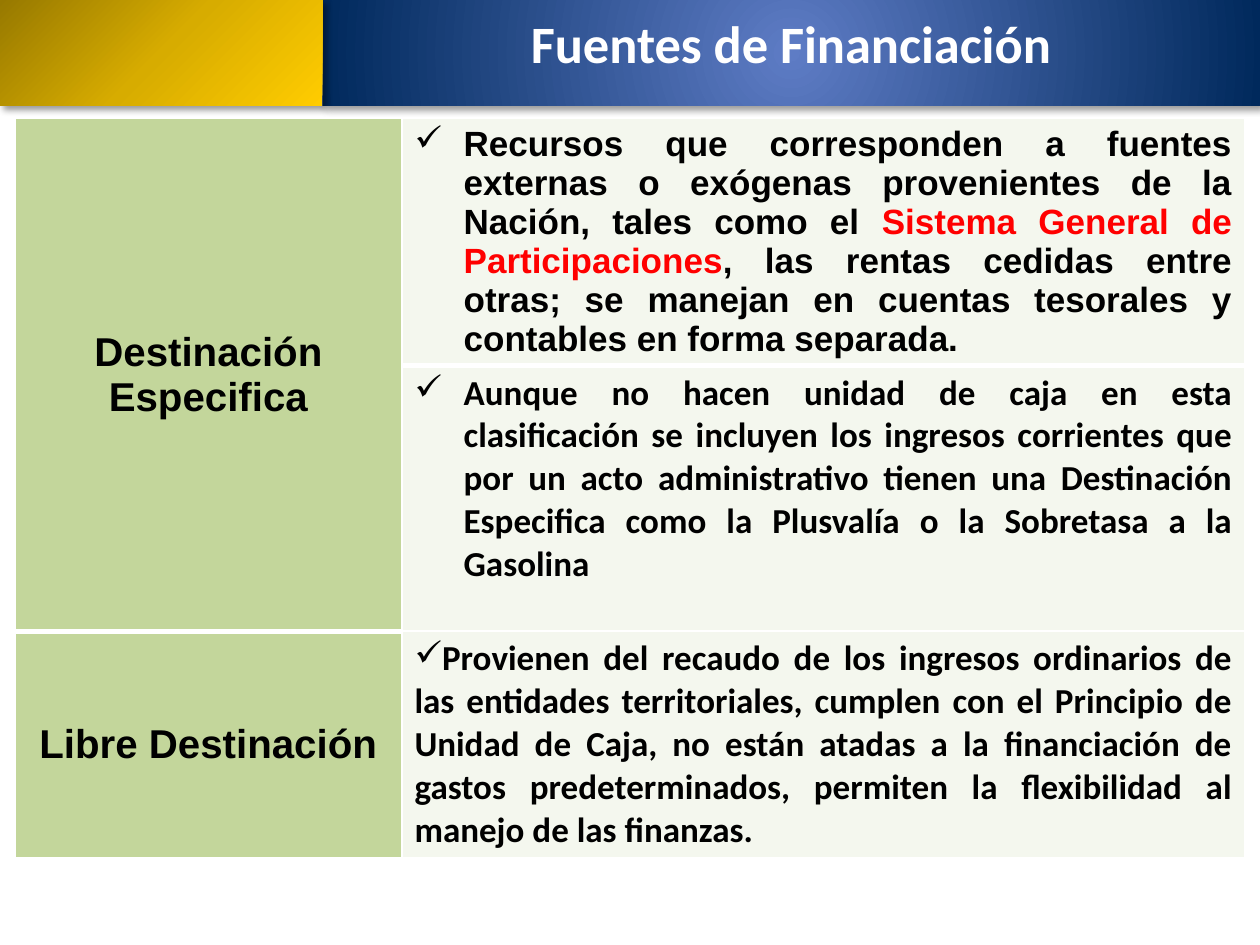
from dataclasses import dataclass

from lxml import etree
from pptx import Presentation
from pptx.dml.color import RGBColor
from pptx.enum import shapes, text
from pptx.oxml import ns
from pptx.util import Inches, Pt


@dataclass(frozen=True)
class Theme:
    heading_font: str = "Calibri"
    label_font: str = "Arial"
    heading_size: float = 30
    label_size: float = 23
    body_size: float = 20
    white: str = "FFFFFF"
    black: str = "000000"
    accent: str = "FF0000"
    label_fill: str = "C3D69B"
    detail_fill: str = "EBF1DE"
    blue: tuple = ((0, "5E7CC5"), (100, "00295C"))
    gold: tuple = ((0, "977900"), (50, "D7AC00"), (100, "FFCC00"))


def add_xml(parent, tag, **attributes):
    return etree.SubElement(parent, ns.qn(tag), {k: str(v) for k, v in attributes.items()})


class SlideBuilder:
    def __init__(self, slide, theme):
        self.slide = slide
        self.theme = theme

    def style(self, font, size, color, name):
        font.size, font.bold, font.name = Pt(size), True, name
        font.color.rgb = RGBColor.from_string(color)

    def band(self, left, width, height, stops, focus):
        """Header block with a radial gradient and a soft shadow."""
        block = self.slide.shapes.add_shape(
            shapes.MSO_SHAPE.RECTANGLE, Inches(left), 0, Inches(width), Inches(height))
        block.line.fill.background()
        block.fill.gradient()
        properties = block.fill._xPr
        gradient = properties.find(ns.qn("a:gradFill"))
        for child in list(gradient):
            gradient.remove(child)
        stop_list = add_xml(gradient, "a:gsLst")
        for position, color in stops:
            stop = add_xml(stop_list, "a:gs", pos=position * 1000)
            add_xml(stop, "a:srgbClr", val=color)
        radial = add_xml(gradient, "a:path", path="circle")
        add_xml(radial, "a:fillToRect", **{side: value * 1000 for side, value in zip("ltrb", focus)})
        block.shadow.inherit = False
        shadow = add_xml(properties.find(ns.qn("a:effectLst")), "a:outerShdw",
                         blurRad=Pt(4), dist=Pt(3), dir=45 * 60000, algn="tl", rotWithShape=0)
        add_xml(add_xml(shadow, "a:srgbClr", val=self.theme.black), "a:alpha", val=40000)

    def heading(self, wording, left, top, width, height):
        title = self.slide.shapes.title
        title.left, title.top, title.width, title.height = map(Inches, (left, top, width, height))
        title.text_frame.text = wording
        title.text_frame.vertical_anchor = text.MSO_ANCHOR.TOP
        title.text_frame.auto_size = text.MSO_AUTO_SIZE.NONE
        paragraph = title.text_frame.paragraphs[0]
        paragraph.alignment = text.PP_ALIGN.CENTER
        paragraph.line_spacing = 0.8
        self.style(paragraph.font, self.theme.heading_size, self.theme.white, self.theme.heading_font)
        # Bring the heading in front of the bands
        self.slide.shapes._spTree.append(title._element)

    def table(self, left, top, columns, rows):
        table = self.slide.shapes.add_table(
            len(rows), len(columns), Inches(left), Inches(top),
            Inches(sum(columns)), Inches(sum(rows))).table
        table.first_row = table.horz_banding = False
        for column, width in zip(table.columns, columns):
            column.width = Inches(width)
        for row, height in zip(table.rows, rows):
            row.height = Inches(height)
        return table

    def finish_cell(self, cell, fill, bottom=1, opacity=100):
        properties = cell._tc.get_or_add_tcPr()
        for side, width in (("L", 1), ("R", 1), ("T", 1), ("B", bottom)):
            border = add_xml(properties, f"a:ln{side}", w=Pt(width))
            add_xml(add_xml(border, "a:solidFill"), "a:srgbClr", val=self.theme.white)
        cell.fill.solid()
        cell.fill.fore_color.rgb = RGBColor.from_string(fill)
        if opacity < 100:
            color = properties.find(ns.qn("a:solidFill")).find(ns.qn("a:srgbClr"))
            add_xml(color, "a:alpha", val=opacity * 1000)

    def label(self, cell, wording, bottom=1):
        self.finish_cell(cell, self.theme.label_fill, bottom)
        cell.vertical_anchor = text.MSO_ANCHOR.MIDDLE
        cell.text = wording
        paragraph = cell.text_frame.paragraphs[0]
        paragraph.alignment = text.PP_ALIGN.CENTER
        self.style(paragraph.font, self.theme.label_size, self.theme.black, self.theme.label_font)

    def detail(self, cell, parts, font, indent=0.0, bottom=1):
        """Check-marked paragraph; every second part is highlighted."""
        self.finish_cell(cell, self.theme.detail_fill, bottom, opacity=50)
        paragraph = cell.text_frame.paragraphs[0]
        paragraph.alignment = text.PP_ALIGN.JUSTIFY
        properties = paragraph._p.get_or_add_pPr()
        properties.set("marL", str(Inches(indent)))
        properties.set("indent", str(-Inches(indent)))
        add_xml(properties, "a:buChar", char="✓")
        self.style(paragraph.font, self.theme.body_size, self.theme.black, font)
        for index, wording in enumerate(parts):
            run = paragraph.add_run()
            run.text = wording
            color = self.theme.accent if index % 2 else self.theme.black
            self.style(run.font, self.theme.body_size, color, font)


def main():
    theme = Theme()
    deck = Presentation()
    deck.slide_width, deck.slide_height = Inches(10), Inches(7.5)
    builder = SlideBuilder(deck.slides.add_slide(deck.slide_layouts[5]), theme)

    # Header
    split, header_height = 2.56, 0.84
    builder.band(split, 10 - split, header_height, theme.blue, (50, 50, 50, 50))
    builder.band(0, split, header_height, theme.gold, (0, 0, 100, 100))
    builder.heading("Fuentes de Financiación", split, 0.13, 10 - split, 0.63)

    # Funding sources
    sources = builder.table(0.12, 0.94, (3.07, 6.69), (1.95, 2.11, 1.79))
    sources.cell(0, 0).merge(sources.cell(1, 0))
    builder.label(sources.cell(0, 0), "Destinación Especifica", bottom=3)
    builder.finish_cell(sources.cell(1, 0), theme.label_fill, bottom=3)
    builder.label(sources.cell(2, 0), "Libre Destinación")

    builder.detail(sources.cell(0, 1), (
        "Recursos que corresponden a fuentes externas o exógenas provenientes de la Nación, "
        "tales como el ",
        "Sistema General de Participaciones",
        ", las rentas cedidas entre otras; se manejan en cuentas tesorales y contables "
        "en forma separada.",
    ), theme.label_font, indent=0.39, bottom=3)
    builder.detail(sources.cell(1, 1), (
        "Aunque no hacen unidad de caja en esta clasificación se incluyen los ingresos "
        "corrientes que por un acto administrativo tienen una Destinación Especifica como "
        "la Plusvalía o la Sobretasa a la Gasolina",
    ), theme.heading_font, indent=0.39)
    builder.detail(sources.cell(2, 1), (
        "Provienen del recaudo de los ingresos ordinarios de las entidades territoriales, "
        "cumplen con el Principio de Unidad de Caja, no están atadas a la financiación de "
        "gastos predeterminados, permiten la flexibilidad al manejo de las finanzas.",
    ), theme.heading_font)

    deck.save("out.pptx")


if __name__ == "__main__":
    main()
